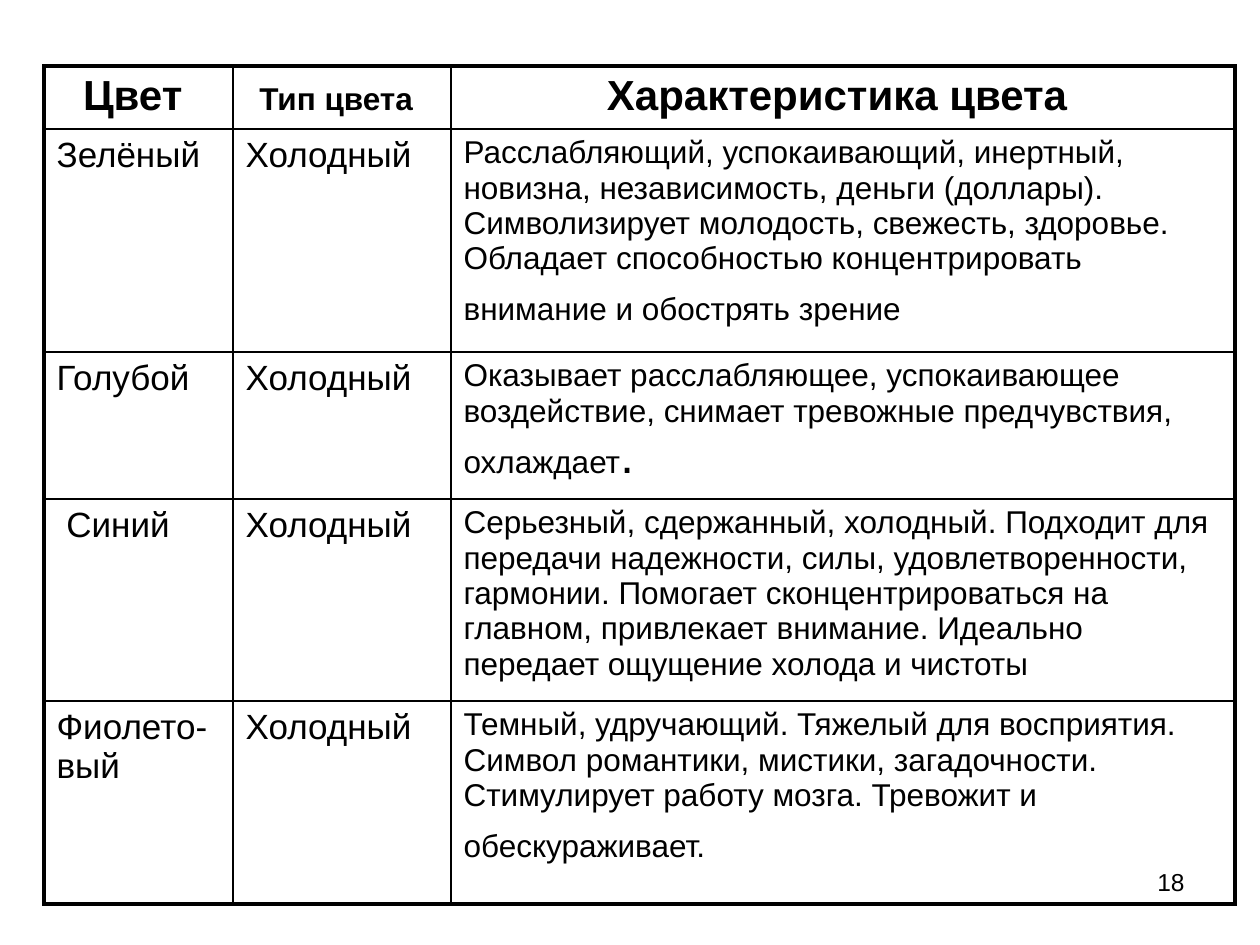
from dataclasses import dataclass

from lxml import etree
from pptx import Presentation
from pptx.dml.color import RGBColor
from pptx.enum.text import PP_ALIGN
from pptx.oxml.ns import qn
from pptx.util import Emu, Pt

LEFT, CENTER, RIGHT = PP_ALIGN.LEFT, PP_ALIGN.CENTER, PP_ALIGN.RIGHT
EMU_PER_PX = 914400 / 126
BLANK_LAYOUT = 6


@dataclass(frozen=True)
class Theme:
    font: str = "Arial"
    ink: str = "000000"
    title: int = 24
    name: int = 20
    body: int = 18
    accent: int = 28
    number: int = 14
    outer_line: float = 2.25
    inner_line: float = 1


THEME = Theme()

COLUMNS = [189, 218, 784]
ROWS = [63, 223, 147, 202, 203]
HEADINGS = [
    [("Цвет ", THEME.title, True)],
    [("Тип цвета", THEME.body, True), (" ", THEME.title, False)],
    [("Характеристика цвета ", THEME.title, True)],
]
COLORS = [
    ("Зелёный",
     "Расслабляющий, успокаивающий, инертный, новизна, независимость, "
     "деньги (доллары). Символизирует молодость, свежесть, здоровье. "
     "Обладает способностью концентрировать внимание и обострять зрение", " "),
    ("Голубой",
     "Оказывает расслабляющее, успокаивающее воздействие, снимает "
     "тревожные предчувствия, охлаждает", "."),
    (" Синий",
     "Серьезный, сдержанный, холодный. Подходит для передачи надежности, "
     "силы, удовлетворенности, гармонии. Помогает сконцентрироваться на "
     "главном, привлекает внимание. Идеально передает ощущение холода и чистоты", ""),
    ("Фиолето-вый",
     "Темный, удручающий. Тяжелый для восприятия. Символ романтики, "
     "мистики, загадочности. Стимулирует работу мозга. Тревожит и "
     "обескураживает.", " "),
]


def px(length):
    return Emu(round(length * EMU_PER_PX))


class PageBuilder:
    def __init__(self, deck, theme):
        self.theme = theme
        self.page = deck.slides.add_slide(deck.slide_layouts[BLANK_LAYOUT])

    def add_spans(self, frame, spans, align):
        para = frame.paragraphs[0]
        para.alignment = align
        for text, size, bold in spans:
            span = para.add_run()
            span.text = text
            span.font.name = self.theme.font
            span.font.size = Pt(size)
            span.font.bold = bold
            span.font.color.rgb = RGBColor.from_string(self.theme.ink)

    def text(self, left, top, width, height, spans, align):
        box = self.page.shapes.add_textbox(px(left), px(top), px(width), px(height))
        box.text_frame.word_wrap = True
        self.add_spans(box.text_frame, spans, align)

    def border(self, cell, side, is_outer):
        width = self.theme.outer_line if is_outer else self.theme.inner_line
        properties = cell._tc.get_or_add_tcPr()
        line = etree.SubElement(properties, qn(f"a:ln{side}"), w=str(int(Pt(width))))
        fill = etree.SubElement(line, qn("a:solidFill"))
        etree.SubElement(fill, qn("a:srgbClr"), val=self.theme.ink)

    def table(self, left, top, columns, rows, content):
        frame = self.page.shapes.add_table(
            len(rows), len(columns), px(left), px(top), px(sum(columns)), px(sum(rows)))
        table = frame.table
        table.first_row = False
        table.horz_banding = False
        for column, width in zip(table.columns, columns):
            column.width = px(width)
        for row, height in zip(table.rows, rows):
            row.height = px(height)
        for row_index, row in enumerate(content):
            for column_index, spans in enumerate(row):
                cell = table.cell(row_index, column_index)
                self.add_spans(cell.text_frame, spans, LEFT if row_index else CENTER)
                self.border(cell, "L", column_index == 0)
                self.border(cell, "R", column_index == len(columns) - 1)
                self.border(cell, "T", row_index == 0)
                self.border(cell, "B", row_index == len(rows) - 1)
                cell.fill.background()


def color_row(name, description, ending):
    details = [(description, THEME.body, False)]
    if ending:
        details.append((ending, THEME.accent, False))
    return [[(name, THEME.name, False)], [("Холодный", THEME.name, False)], details]


def main():
    deck = Presentation()
    deck.slide_width, deck.slide_height = px(1260), px(945)
    builder = PageBuilder(deck, THEME)
    builder.text(903, 861, 294, 66, [("18", THEME.number, False)], RIGHT)
    content = [HEADINGS] + [color_row(*color) for color in COLORS]
    builder.table(44, 66, COLUMNS, ROWS, content)
    deck.save("out.pptx")


if __name__ == "__main__":
    main()
